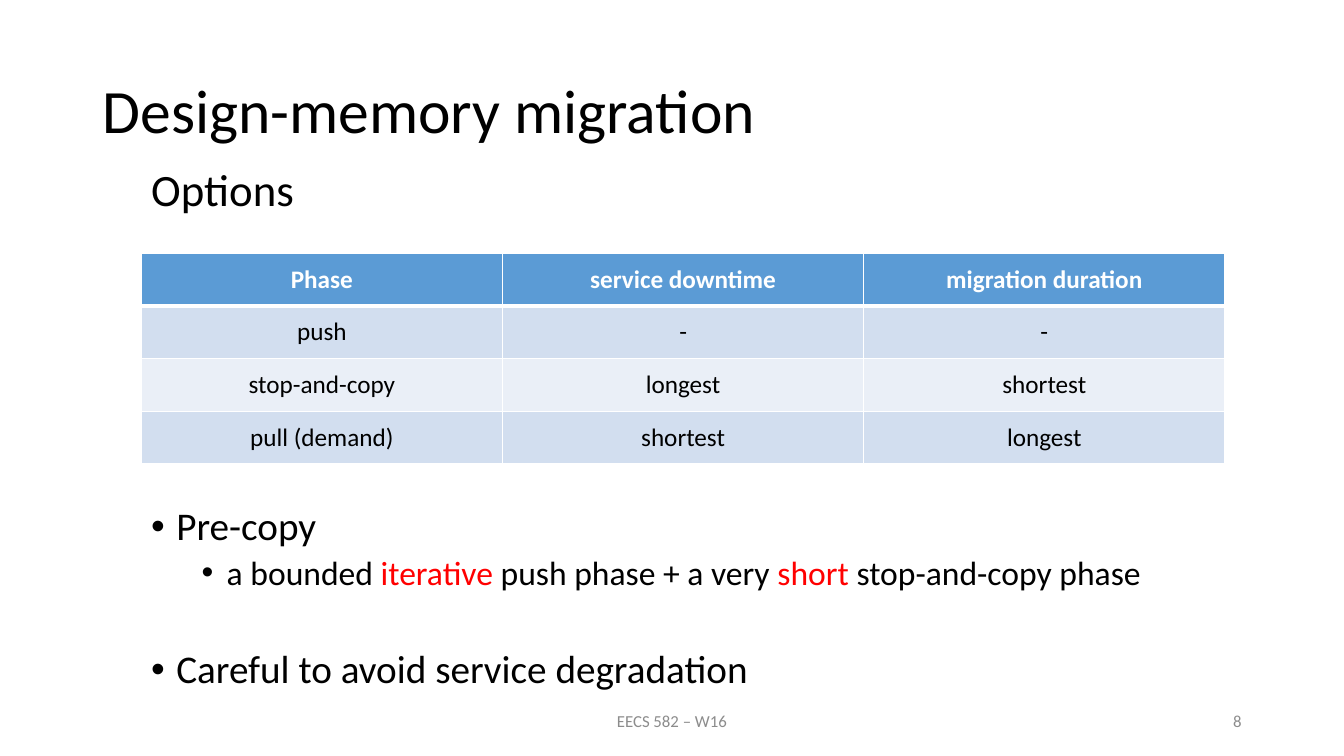
from dataclasses import dataclass

from lxml import etree
from pptx import Presentation
from pptx import util as u
from pptx.dml.color import RGBColor
from pptx.enum import text
from pptx.oxml import ns

Cm, Pt = u.Cm, u.Pt
ALIGN, MID = text.PP_ALIGN, text.MSO_ANCHOR.MIDDLE


@dataclass(frozen=True)
class Theme:
    font: str = "Calibri"
    ink: str = "000000"
    paper: str = "FFFFFF"
    gray: str = "8C8C8C"
    red: str = "FF0000"
    head: str = "5B9BD5"
    bands: tuple = ("D2DEEF", "EAEFF7")
    title: int = 44
    lead: int = 32
    point: int = 28
    sub: int = 24
    cell: int = 18
    foot: int = 12


THEME = Theme()

ROWS = [
    ("Phase", "service downtime", "migration duration"),
    ("push", "-", "-"),
    ("stop-and-copy", "longest", "shortest"),
    ("pull (demand)", "shortest", "longest"),
]

# Level, space before, and runs; a run in red is marked True
POINTS = [
    (0, 0, [("Pre-copy", False)]),
    (1, 5, [("a bounded ", False), ("iterative ", True),
            ("push phase + a very ", False), ("short ", True),
            ("stop-and-copy phase", False)]),
    (0, 41, [("Careful to avoid service degradation", False)]),
]


def style(run, size, color, bold=False):
    font = run.font
    font.name, font.size, font.bold = THEME.font, Pt(size), bold
    font.color.rgb = RGBColor.from_string(color)


def add_frame(slide, box):
    frame = slide.shapes.add_textbox(*map(Cm, box)).text_frame
    frame.word_wrap = True
    return frame


def add_line(slide, box, words, size, color, align=ALIGN.LEFT, mid=True, space=1.0):
    frame = add_frame(slide, box)
    frame.text = words
    if mid:
        frame.vertical_anchor = MID
    para = frame.paragraphs[0]
    para.alignment, para.line_spacing = align, space
    style(para.runs[0], size, color)


def add_heading(slide, box):
    left, top, width, height = box
    add_line(slide, box, "Design-memory migration", THEME.title, THEME.ink, space=0.9)
    add_line(slide, (left + 1.22, top + 3.09, width, 1.85), "Options",
             THEME.lead, THEME.ink, mid=False, space=0.9)


def add_border(cell, side, width):
    props = cell._tc.get_or_add_tcPr()
    line = etree.SubElement(props, ns.qn(f"a:ln{side}"), w=str(Pt(width)))
    fill = etree.SubElement(line, ns.qn("a:solidFill"))
    etree.SubElement(fill, ns.qn("a:srgbClr"), val=THEME.paper)


def add_phases(slide, box):
    table = slide.shapes.add_table(len(ROWS), len(ROWS[0]), *map(Cm, box)).table
    for r, row in enumerate(ROWS):
        top = r == 0
        for c, words in enumerate(row):
            cell = table.cell(r, c)
            cell.text, cell.vertical_anchor = words, MID
            para = cell.text_frame.paragraphs[0]
            para.alignment = ALIGN.CENTER
            style(para.runs[0], THEME.cell, THEME.paper if top else THEME.ink, top)
            # A thick rule parts the header from the body
            for side in "LRTB":
                thick = (r, side) in ((0, "B"), (1, "T"))
                add_border(cell, side, 3 if thick else 1)
            cell.fill.solid()
            color = THEME.head if top else THEME.bands[(r - 1) % 2]
            cell.fill.fore_color.rgb = RGBColor.from_string(color)


def add_bullet(para, level):
    props = para._p.get_or_add_pPr()
    props.set("marL", str(u.Inches(0.25 + 0.5 * level)))
    props.set("indent", str(u.Inches(-0.25)))
    etree.SubElement(props, ns.qn("a:buFont"), typeface="Arial")
    etree.SubElement(props, ns.qn("a:buChar"), char="•")


def add_points(slide, box):
    frame = add_frame(slide, box)
    for i, (level, gap, parts) in enumerate(POINTS):
        para = frame.add_paragraph() if i else frame.paragraphs[0]
        para.level = level
        add_bullet(para, level)
        para.line_spacing, para.space_before = 0.9, Pt(gap)
        size = THEME.sub if level else THEME.point
        for words, red in parts:
            run = para.add_run()
            run.text = words
            style(run, size, THEME.red if red else THEME.ink)


def add_footer(slide, box):
    left, top, width, height = box
    add_line(slide, (left, top, 11.43, height), "EECS 582 – W16",
             THEME.foot, THEME.gray, ALIGN.CENTER)
    add_line(slide, (left + width - 7.62, top, 7.62, height), "8",
             THEME.foot, THEME.gray, ALIGN.RIGHT)


def main():
    deck = Presentation()
    deck.slide_width, deck.slide_height = Cm(33.87), Cm(19.05)
    slide = deck.slides.add_slide(deck.slide_layouts[6])
    add_heading(slide, (2.34, 1.02, 29.21, 3.68))
    add_phases(slide, (3.56, 6.38, 27.31, 5.31))
    add_points(slide, (3.56, 12.65, 29.21, 6.4))
    add_footer(slide, (11.22, 17.65, 20.32, 1.02))
    deck.save("out.pptx")


if __name__ == "__main__":
    main()
